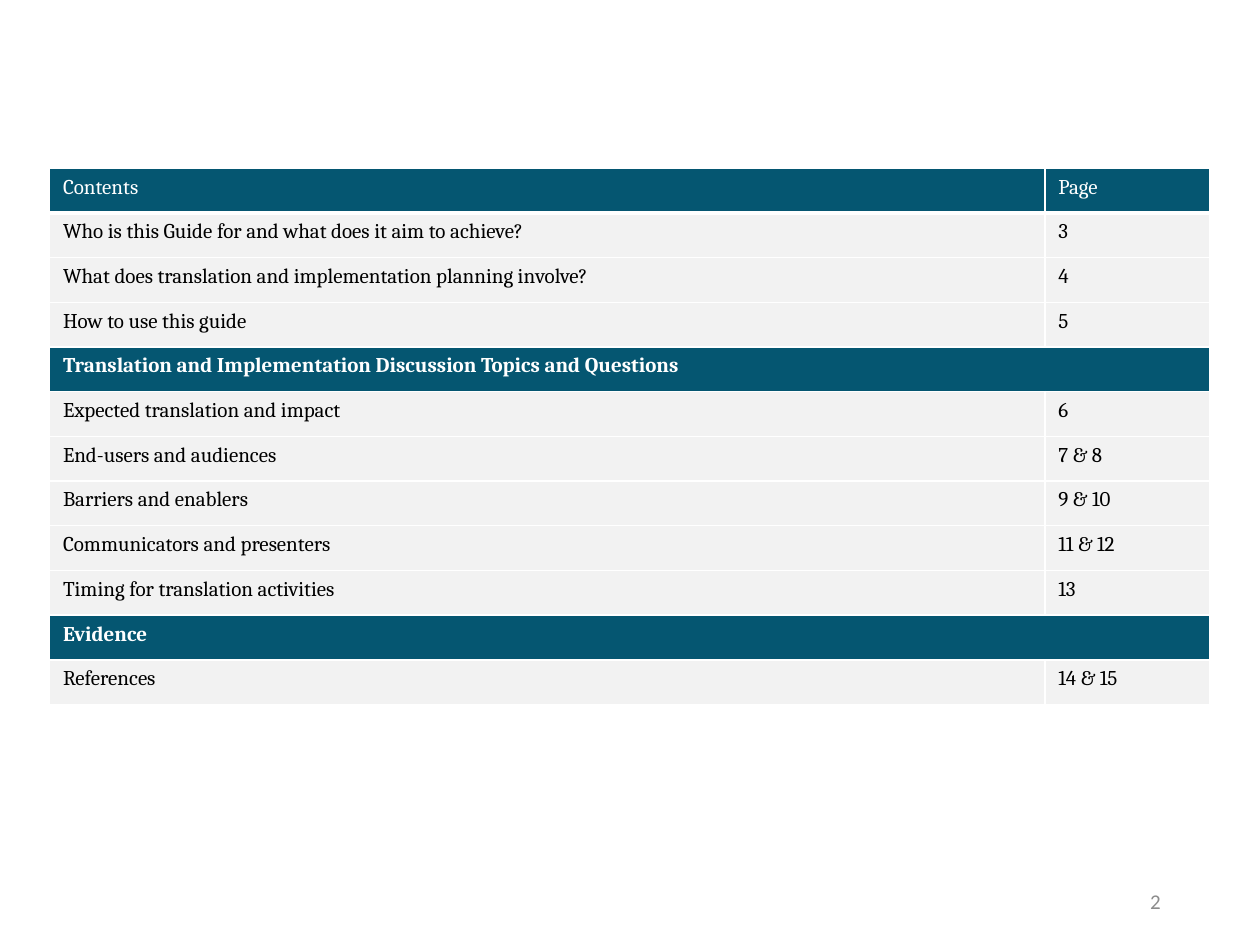
"""Build the contents slide of a translation and implementation planning guide."""
from dataclasses import dataclass

from lxml import etree
from pptx import Presentation
from pptx.dml.color import RGBColor
from pptx.enum import text
from pptx.oxml import ns
from pptx.util import Pt

HEADINGS = ("Contents", "Page")
SECTIONS = [
    (None, [
        ("Who is this Guide for and what does it aim to achieve?", "3"),
        ("What does translation and implementation planning involve?", "4"),
        ("How to use this guide", "5"),
    ]),
    ("Translation and Implementation Discussion Topics and Questions", [
        ("Expected translation and impact", "6"),
        ("End-users and audiences", "7 & 8"),
        ("Barriers and enablers", "9 & 10"),
        ("Communicators and presenters", "11 & 12"),
        ("Timing for translation activities", "13"),
    ]),
    ("Evidence", [("References", "14 & 15")]),
]
SLIDE_NUMBER = "2"


@dataclass(frozen=True)
class Theme:
    """Colours, fonts and type size of the slide."""
    band: str = "055671"
    entry: str = "F2F2F2"
    light: str = "FFFFFF"
    dark: str = "000000"
    muted: str = "8C8C8C"
    body_font: str = "Cambria"
    number_font: str = "Calibri"
    size: float = 12


THEME = Theme()
LEFT, TOP = 28.4, 96.1
COLUMN_WIDTHS = (568.8, 94.3)
ROW_HEIGHT = 25.56
INSET_X, INSET_Y = 7.6, 4
RULE, HEADER_RULE = 1, 3


def write(paragraph, wording, font, color, bold=False):
    """Add one styled run to a paragraph."""
    run = paragraph.add_run()
    run.text = wording
    run.font.name = font
    run.font.size = Pt(THEME.size)
    run.font.bold = bold
    run.font.color.rgb = RGBColor.from_string(color)


def rule_cell(cell, bottom):
    """Draw the light rules around a table cell."""
    properties = cell._tc.get_or_add_tcPr()
    for side, width in (("L", RULE), ("R", RULE), ("T", RULE), ("B", bottom)):
        line = etree.SubElement(properties, ns.qn(f"a:ln{side}"), w=str(Pt(width)))
        fill = etree.SubElement(line, ns.qn("a:solidFill"))
        etree.SubElement(fill, ns.qn("a:srgbClr"), val=THEME.light)


def fill_cell(cell, wording, banded, bold=False, bottom=RULE):
    """Style a table cell and write its wording."""
    rule_cell(cell, bottom)
    cell.fill.solid()
    cell.fill.fore_color.rgb = RGBColor.from_string(THEME.band if banded else THEME.entry)
    cell.margin_left = cell.margin_right = Pt(INSET_X)
    cell.margin_top = cell.margin_bottom = Pt(INSET_Y)
    if wording:
        write(cell.text_frame.paragraphs[0], wording, THEME.body_font,
              THEME.light if banded else THEME.dark, bold)


def add_contents(slide):
    """Add the contents table with its section bands."""
    lines = [(HEADINGS, "header")]
    for section, entries in SECTIONS:
        if section:
            lines.append(((section, ""), "section"))
        lines += [(entry, "entry") for entry in entries]

    contents = slide.shapes.add_table(
        len(lines), len(HEADINGS), Pt(LEFT), Pt(TOP),
        Pt(sum(COLUMN_WIDTHS)), Pt(ROW_HEIGHT * len(lines))).table
    for column, width in zip(contents.columns, COLUMN_WIDTHS):
        column.width = Pt(width)
    for index, (wordings, role) in enumerate(lines):
        contents.rows[index].height = Pt(ROW_HEIGHT)
        for position, wording in enumerate(wordings):
            fill_cell(contents.cell(index, position), wording, role != "entry",
                      role == "section", HEADER_RULE if role == "header" else RULE)
        if role == "section":
            contents.cell(index, 0).merge(contents.cell(index, 1))


def add_slide_number(slide):
    """Add the slide number at the lower right."""
    frame = slide.shapes.add_textbox(Pt(508.3), Pt(500.4), Pt(162), Pt(28.8)).text_frame
    frame.word_wrap = True
    frame.vertical_anchor = text.MSO_ANCHOR.MIDDLE
    number = frame.paragraphs[0]
    number.alignment = text.PP_ALIGN.RIGHT
    write(number, SLIDE_NUMBER, THEME.number_font, THEME.muted)


def main():
    """Create and save the presentation."""
    deck = Presentation()
    deck.slide_width, deck.slide_height = Pt(720), Pt(540)
    slide = deck.slides.add_slide(deck.slide_layouts[6])
    add_contents(slide)
    add_slide_number(slide)
    deck.save("out.pptx")


if __name__ == "__main__":
    main()
